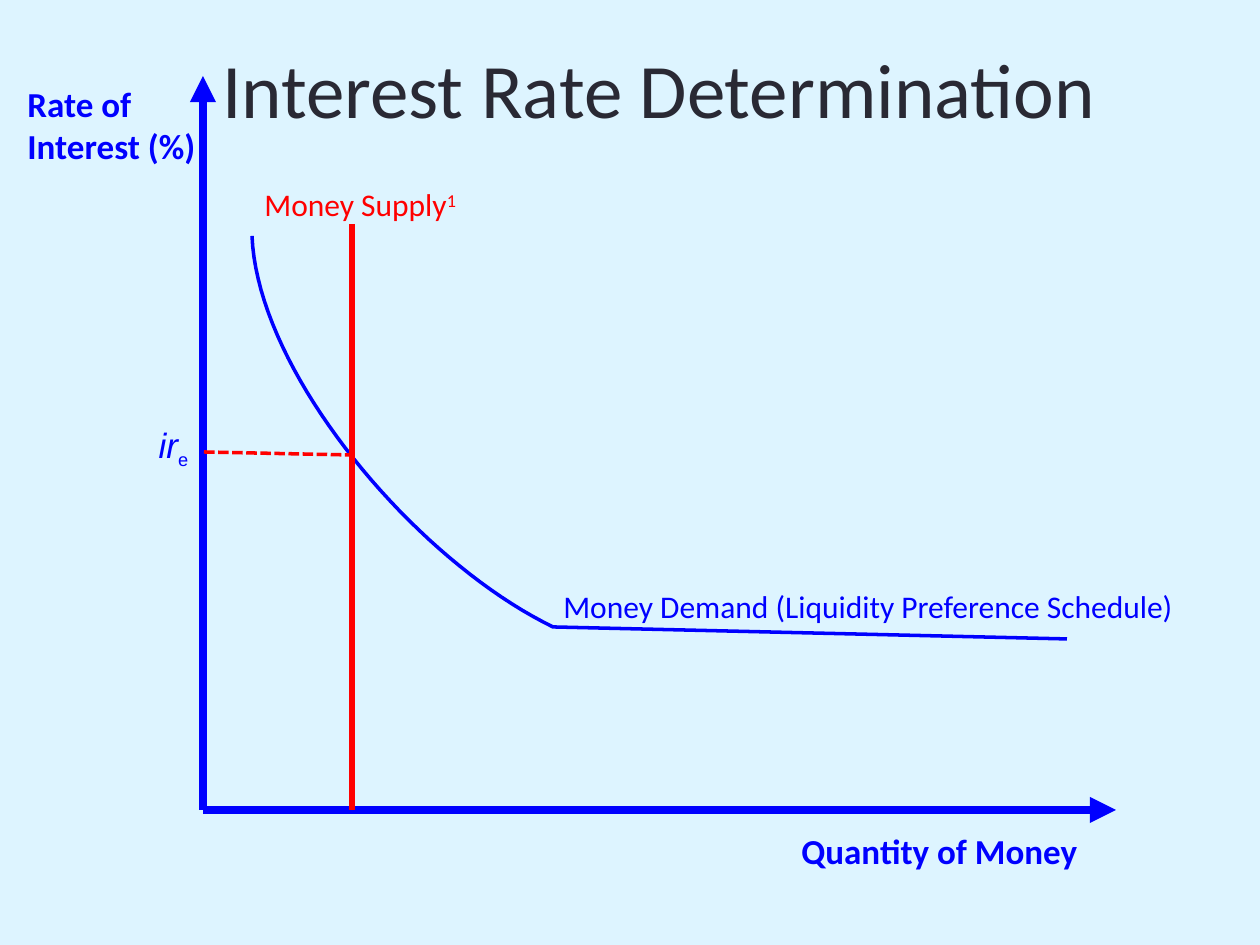
from pptx import Presentation
from pptx.dml.color import RGBColor
from pptx.enum.dml import MSO_LINE_DASH_STYLE as DASH
from pptx.enum.shapes import MSO_CONNECTOR
from pptx.enum.text import MSO_ANCHOR, PP_ALIGN
from pptx.oxml.ns import qn
from pptx.util import Emu, Pt
from lxml import etree

EMU_PER_PX = 914400 / 126
BACKGROUND = RGBColor(0xDD, 0xF4, 0xFF)
INK = RGBColor(0x29, 0x29, 0x34)
BLUE = RGBColor(0x00, 0x00, 0xFF)
RED = RGBColor(0xFF, 0x00, 0x00)

TITLE = {"size": Pt(44), "name": "Calibri"}
AXIS_LABEL = {"size": Pt(20), "name": "Calibri", "bold": True}
CURVE_LABEL = {"size": Pt(18), "name": "Calibri"}
RATE = {"size": Pt(20), "name": "Arial", "italic": True}
RATE_SUB = {"size": Pt(18), "name": "Arial", "italic": False}


def px(n):
    return Emu(round(n * EMU_PER_PX))


def add_text(slide, box, runs, color, align=PP_ALIGN.LEFT,
             anchor=MSO_ANCHOR.TOP, wrap=True):
    """Each run is (text, font format, baseline shift in percent)."""
    tf = slide.shapes.add_textbox(*map(px, box)).text_frame
    for name, value in {"word_wrap": wrap, "vertical_anchor": anchor}.items():
        setattr(tf, name, value)
    p = tf.paragraphs[0]
    p.alignment = align
    for text, fmt, shift in runs:
        r = p.add_run()
        r.text = text
        r.font.color.rgb = color
        for name, value in fmt.items():
            setattr(r.font, name, value)
        if shift:
            r.font._element.set("baseline", str(shift * 1000))


def add_line(slide, start, end, color, width, arrow=False, dash=None):
    s = slide.shapes.add_connector(MSO_CONNECTOR.STRAIGHT,
                                   *map(px, start + end))
    s.line.color.rgb = color
    s.line.width = Pt(width)
    if dash:
        s.line.dash_style = dash
    if arrow:
        etree.SubElement(s.line._get_or_add_ln(), qn("a:tailEnd"),
                         type="triangle")
    etree.SubElement(s._element.spPr, qn("a:effectLst"))


def bezier(points, steps=40):
    """Points along a cubic Bezier curve."""
    for i in range(steps + 1):
        t = i / steps
        u = 1 - t
        weights = (u ** 3, 3 * u * u * t, 3 * u * t * t, t ** 3)
        yield tuple(sum(w * p[axis] for w, p in zip(weights, points))
                    for axis in (0, 1))


def add_curve(slide, points, color, width):
    start, *rest = [(px(x), px(y)) for x, y in points]
    builder = slide.shapes.build_freeform(*start)
    builder.add_line_segments(rest, close=False)
    s = builder.convert_to_shape()
    s.shadow.inherit = False
    s.fill.background()
    s.line.color.rgb = color
    s.line.width = Pt(width)


def main():
    prs = Presentation()
    prs.slide_width, prs.slide_height = px(1260), px(945)
    slide = prs.slides.add_slide(prs.slide_layouts[6])
    fill = slide.background.fill
    fill.solid()
    fill.fore_color.rgb = BACKGROUND

    # Title
    add_text(slide, (92, 9, 1134, 158),
             [("Interest Rate Determination", TITLE, 0)], INK,
             PP_ALIGN.CENTER, MSO_ANCHOR.MIDDLE)

    # Axes and their labels
    origin = (203, 810)
    for tip in ((203, 76), (1116, 810)):
        add_line(slide, origin, tip, BLUE, 5, arrow=True)
    add_text(slide, (15, 76, 218, 97),
             [("Rate of Interest (%)", AXIS_LABEL, 0)], BLUE)
    add_text(slide, (789, 823, 307, 55),
             [("Quantity of Money", AXIS_LABEL, 0)], BLUE)

    # Money demand: a falling curve with a nearly flat tail
    falling = bezier([(252, 236), (258, 375), (417, 561), (553, 627)])
    add_curve(slide, [*falling, (1067, 639)], BLUE, 2)

    # Money supply
    add_line(slide, (352, 224), (352, 810), RED, 3.5)
    add_text(slide, (252, 179, 238, 50),
             [("Money Supply", CURVE_LABEL, 0), ("1", CURVE_LABEL, 30)], RED)

    # Equilibrium rate
    add_text(slide, (145, 417, 57, 55),
             [("ir", RATE, 0), ("e", RATE_SUB, -25)], BLUE,
             PP_ALIGN.CENTER, wrap=False)
    add_line(slide, (204, 452), (352, 455), RED, 2, dash=DASH.SQUARE_DOT)

    add_text(slide, (551, 581, 645, 50),
             [("Money Demand (Liquidity Preference Schedule)",
               CURVE_LABEL, 0)], BLUE)

    prs.save("out.pptx")


if __name__ == "__main__":
    main()
